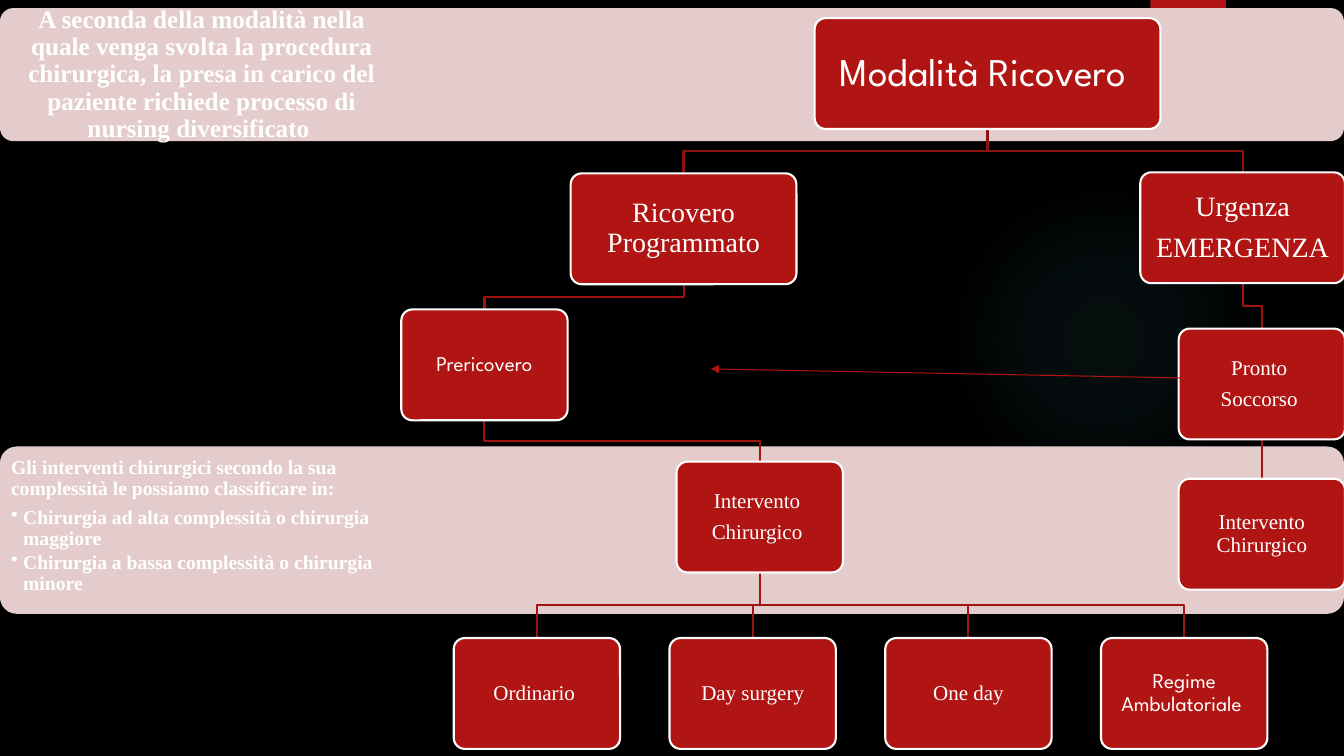
"""Builds a slide with the flow chart of surgical admission paths."""
import lxml.etree
import pptx
import pptx.dml.color
import pptx.enum.shapes
import pptx.enum.text
import pptx.oxml
import pptx.oxml.ns
import pptx.util

Inches = pptx.util.Inches
Pt = pptx.util.Pt
RGBColor = pptx.dml.color.RGBColor
SHAPE = pptx.enum.shapes.MSO_SHAPE
STRAIGHT = pptx.enum.shapes.MSO_CONNECTOR.STRAIGHT
ALIGN = pptx.enum.text.PP_ALIGN
ANCHOR = pptx.enum.text.MSO_ANCHOR
qn = pptx.oxml.ns.qn

BLACK = RGBColor(0x00, 0x00, 0x00)
WHITE = RGBColor(0xFF, 0xFF, 0xFF)
RED = RGBColor(0xB0, 0x15, 0x13)
PINK = RGBColor(0xE4, 0xCC, 0xCC)
LINK_TOP = RGBColor(0x8D, 0x11, 0x0F)
LINK = RGBColor(0xA0, 0x13, 0x11)
GLOW = RGBColor(0x50, 0xB9, 0xC1)
SERIF = "Times New Roman"
SANS = "League Spartan"
NODE_W, NODE_H = 1.65, 1.1

NODES = {
    "ricovero": (8.08, 0.18, 3.43, ["Modalità Ricovero "], 28, SANS),
    "programmato": (5.66, 1.72, 2.24, ["Ricovero Programmato"], 20, SERIF),
    "prericovero": (3.98, 3.07, NODE_W, ["Prericovero"], 15, SANS),
    "intervento": (6.71, 4.58, NODE_W, ["Intervento ", "Chirurgico "], 15, SERIF),
    "urgenza": (11.31, 1.71, 2.03, ["Urgenza", "EMERGENZA"], 20, SERIF),
    "soccorso": (11.69, 3.26, NODE_W, ["Pronto ", "Soccorso "], 15, SERIF),
    "urgente": (11.69, 4.75, NODE_W, ["Intervento Chirurgico"], 15, SERIF),
}
REGIMES = [("Ordinario ", SERIF), ("Day surgery", SERIF), ("One day", SERIF),
           ("Regime Ambulatoriale ", SANS)]
for i, (label, font) in enumerate(REGIMES):
    NODES[label] = (4.5 + 2.14 * i, 6.33, NODE_W, [label], 15, font)

LINKS = [("ricovero", "programmato", LINK_TOP), ("ricovero", "urgenza", LINK_TOP),
         ("programmato", "prericovero", LINK), ("prericovero", "intervento", LINK),
         ("urgenza", "soccorso", LINK), ("soccorso", "urgente", LINK)]
LINKS += [("intervento", label, LINK) for label, _ in REGIMES]


def add_text(p, text, size, font=SERIF, bold=False, align=ALIGN.CENTER,
             after=0.38, bullet=False):
    """Format a paragraph and put the text in it."""
    if bullet:
        pPr = p._p.get_or_add_pPr()
        pPr.set("marL", str(Inches(0.12)))
        pPr.set("indent", str(-Inches(0.12)))
        lxml.etree.SubElement(pPr, qn("a:buChar")).set("char", "•")
    p.alignment = align
    p.line_spacing = 0.9
    p.space_after = Pt(round(after * size, 1))
    r = p.add_run()
    r.text = text
    r.font.size = Pt(size)
    r.font.name = font
    r.font.bold = bold
    r.font.color.rgb = WHITE


def set_frame(sp, inset, anchor):
    """Set the insets and anchor of a shape and return its text frame."""
    tf = sp.text_frame
    tf.word_wrap = True
    tf.vertical_anchor = anchor
    tf.margin_left = tf.margin_right = Inches(inset)
    tf.margin_top = tf.margin_bottom = Inches(inset)
    return tf


def add_box(s, kind, x, y, w, h, fill, border=None):
    """Add a filled preset shape without shadow."""
    sp = s.shapes.add_shape(kind, Inches(x), Inches(y), Inches(w), Inches(h))
    sp.shadow.inherit = False
    sp.fill.solid()
    sp.fill.fore_color.rgb = fill
    if kind == SHAPE.ROUNDED_RECTANGLE:
        sp.adjustments[0] = 0.1
    if border is None:
        sp.line.fill.background()
    else:
        sp.line.color.rgb = border
        sp.line.width = Pt(1.5)
    return sp


def add_glow(s):
    """Add the faint round glow of the background."""
    sp = add_box(s, SHAPE.OVAL, 9.41, 1.83, 3.08, 3.08, GLOW)
    stops = "".join(
        f'<a:gs pos="{pos}000"><a:srgbClr val="{GLOW}"><a:alpha val="{alpha}000"/>'
        "</a:srgbClr></a:gs>" for pos, alpha in [(0, 7), (36, 6), (69, 0)])
    grad = pptx.oxml.parse_xml(
        '<a:gradFill xmlns:a="http://schemas.openxmlformats.org/drawingml/2006/main">'
        f'<a:gsLst>{stops}</a:gsLst><a:path path="circle">'
        '<a:fillToRect l="50000" t="50000" r="50000" b="50000"/></a:path></a:gradFill>')
    spPr = sp._element.spPr
    spPr.replace(spPr.find(qn("a:solidFill")), grad)


def add_band(s, y, h, inset, anchor, paragraphs):
    """Add a full-width band with its text at the left."""
    add_box(s, SHAPE.ROUNDED_RECTANGLE, 0, y, 13.33, h, PINK)
    sp = s.shapes.add_textbox(0, Inches(y), Inches(4), Inches(h))
    tf = set_frame(sp, inset, anchor)
    for i, (text, style) in enumerate(paragraphs):
        p = tf.add_paragraph() if i else tf.paragraphs[0]
        add_text(p, text, bold=True, **style)


def add_node(s, x, y, w, lines, size, font):
    """Add a box of the flow chart."""
    sp = add_box(s, SHAPE.ROUNDED_RECTANGLE, x, y, w, NODE_H, RED, WHITE)
    tf = set_frame(sp, 0.1 if size < 28 else 0.15, ANCHOR.MIDDLE)
    for i, text in enumerate(lines):
        p = tf.add_paragraph() if i else tf.paragraphs[0]
        add_text(p, text, size, font)


def add_line(s, start, end, color, width):
    """Add a straight line without shadow."""
    line = s.shapes.add_connector(STRAIGHT, *map(Inches, start + end))
    line.line.color.rgb = color
    line.line.width = Pt(width)
    lxml.etree.SubElement(line._element.spPr, qn("a:effectLst"))
    return line


def add_link(s, parent, child, color):
    """Join the bottom of one node to the top of another with an elbow."""
    x1, y1 = parent[0] + parent[2] / 2, parent[1] + NODE_H
    x2, y2 = child[0] + child[2] / 2, child[1]
    if x1 == x2:
        add_line(s, (x1, y1), (x2, y2), color, 1.5)
        return
    mid = (y1 + y2) / 2
    builder = s.shapes.build_freeform(Inches(x1), Inches(y1))
    bends = [(x1, mid), (x2, mid), (x2, y2)]
    builder.add_line_segments([(Inches(x), Inches(y)) for x, y in bends], close=False)
    sp = builder.convert_to_shape()
    sp.shadow.inherit = False
    sp.fill.background()
    sp.line.color.rgb = color
    sp.line.width = Pt(1.5)


def main():
    """Build and save the slide."""
    prs = pptx.Presentation()
    prs.slide_width, prs.slide_height = Inches(13.33), Inches(7.5)
    s = prs.slides.add_slide(prs.slide_layouts[6])
    s.background.fill.solid()
    s.background.fill.fore_color.rgb = BLACK
    add_glow(s)
    add_box(s, SHAPE.RECTANGLE, 11.41, 0, 0.75, 1.25, RED)

    intro = {"size": 14, "align": ALIGN.LEFT}
    item = {**intro, "after": 0.15, "bullet": True}
    add_band(s, 4.43, 1.66, 0.11, ANCHOR.TOP, [
        ("Gli interventi chirurgici secondo la sua complessità le possiamo "
         "classificare in:", intro),
        ("Chirurgia ad alta complessità o chirurgia maggiore", item),
        ("Chirurgia a bassa complessità o chirurgia minore", item)])
    add_band(s, 0.08, 1.32, 0.14, ANCHOR.MIDDLE, [
        ("A seconda della modalità nella quale venga svolta la procedura chirurgica, "
         "la presa in carico del paziente richiede processo di nursing diversificato ",
         {"size": 18})])

    for parent, child, color in LINKS:
        add_link(s, NODES[parent], NODES[child], color)
    for node in NODES.values():
        add_node(s, *node)
    arrow = add_line(s, (11.76, 3.75), (7.05, 3.66), RED, 0.75)
    lxml.etree.SubElement(arrow.line._get_or_add_ln(), qn("a:tailEnd")).set("type", "triangle")
    prs.save("out.pptx")


if __name__ == "__main__":
    main()
